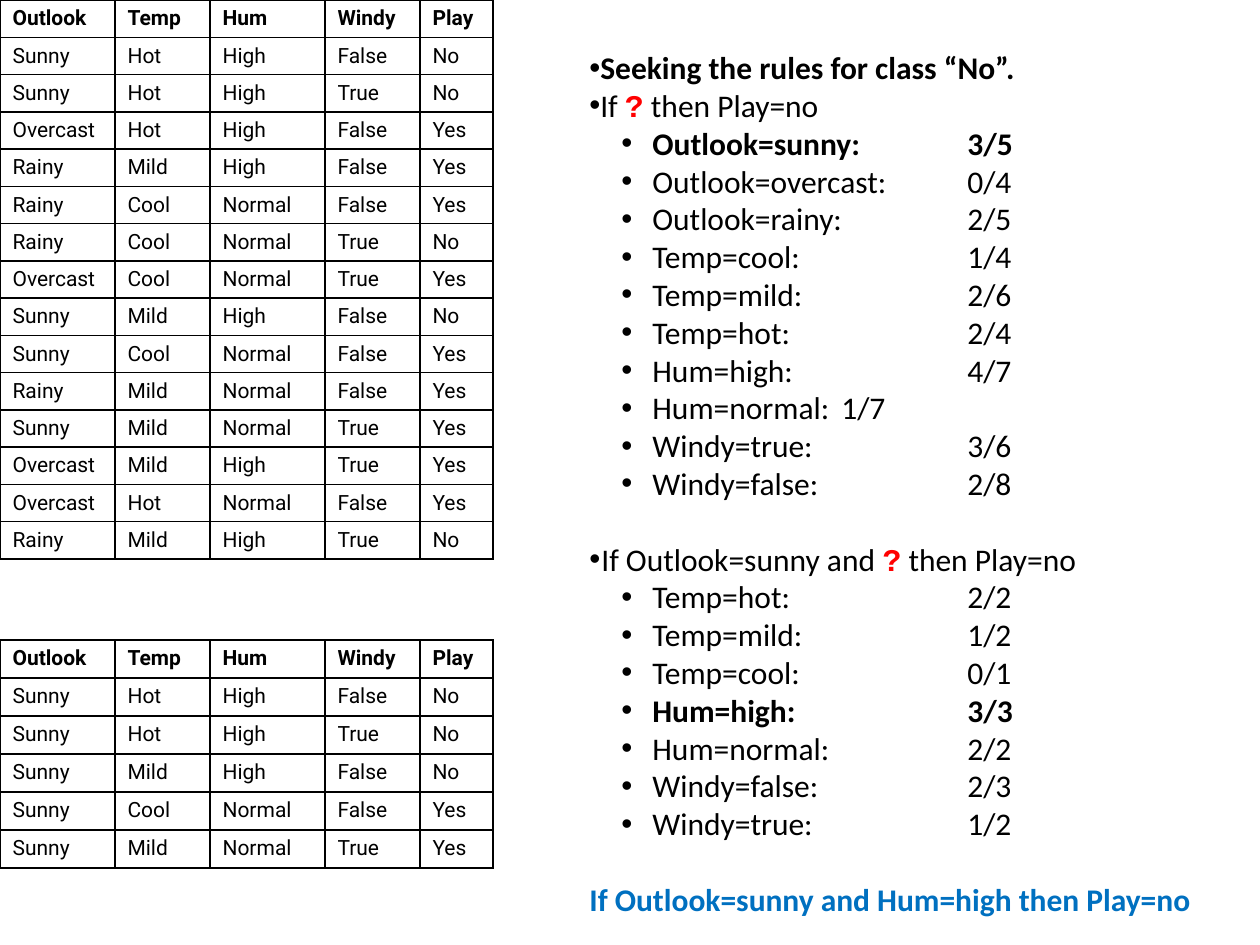
from lxml.etree import SubElement
from pptx import Presentation
from pptx.dml.color import RGBColor
from pptx.enum.text import MSO_ANCHOR, MSO_AUTO_SIZE
from pptx.oxml.ns import qn
from pptx.util import Emu, Pt

BLACK = RGBColor(0, 0, 0)
RED = RGBColor(255, 0, 0)
BLUE = RGBColor(0, 112, 192)

HEADER = ("Outlook", "Temp", "Hum", "Windy", "Play")
WEATHER = [
    ("Sunny", "Hot", "High", "False", "No"),
    ("Sunny", "Hot", "High", "True", "No"),
    ("Overcast", "Hot", "High", "False", "Yes"),
    ("Rainy", "Mild", "High", "False", "Yes"),
    ("Rainy", "Cool", "Normal", "False", "Yes"),
    ("Rainy", "Cool", "Normal", "True", "No"),
    ("Overcast", "Cool", "Normal", "True", "Yes"),
    ("Sunny", "Mild", "High", "False", "No"),
    ("Sunny", "Cool", "Normal", "False", "Yes"),
    ("Rainy", "Mild", "Normal", "False", "Yes"),
    ("Sunny", "Mild", "Normal", "True", "Yes"),
    ("Overcast", "Mild", "High", "True", "Yes"),
    ("Overcast", "Hot", "Normal", "False", "Yes"),
    ("Rainy", "Mild", "High", "True", "No"),
]
SUNNY = [row for row in WEATHER if row[0] == "Sunny"]
COLUMN_WIDTHS = (115, 95, 115, 95, 73)

TITLE = "Seeking the rules for class “No”."
FIRST_RULE = ("If ", "?", " then Play=no")
FIRST_RATIOS = [
    "Outlook=sunny: \t3/5", "Outlook=overcast: \t0/4", "Outlook=rainy: \t2/5",
    "Temp=cool: \t\t1/4", "Temp=mild: \t\t2/6", "Temp=hot:\t\t2/4",
    "Hum=high: \t\t4/7", "Hum=normal: \t1/7",
    "Windy=true: \t\t3/6", "Windy=false: \t\t2/8",
]
SECOND_RULE = ("If Outlook=sunny and ", "?", " then Play=no")
SECOND_RATIOS = [
    "Temp=hot:\t\t2/2", "Temp=mild:\t\t1/2", "Temp=cool:\t\t0/1",
    "Hum=high:\t\t3/3", "Hum=normal:\t\t2/2",
    "Windy=false:\t\t2/3", "Windy=true:\t\t1/2",
]
BEST_RATIOS = (FIRST_RATIOS[0], SECOND_RATIOS[3])
CONCLUSION = "If Outlook=sunny and Hum=high then Play=no"
LINE_GAP = Pt(21.6)


def px(length):
    return Emu(round(length * 914400 / 126))


def style_run(run, size, name, color=BLACK, bold=False):
    run.font.size = Pt(size)
    run.font.name = name
    run.font.color.rgb = color
    run.font.bold = bold


def border_cell(cell):
    properties = cell._tc.get_or_add_tcPr()
    for side in ("lnL", "lnR", "lnT", "lnB"):
        line = SubElement(properties, qn(f"a:{side}"), w=str(Pt(1)))
        fill = SubElement(line, qn("a:solidFill"))
        SubElement(fill, qn("a:srgbClr"), val=str(BLACK))


def add_weather_table(slide, top, row_height, records):
    rows = [HEADER] + records
    table = slide.shapes.add_table(
        len(rows), len(HEADER), 0, px(top),
        px(sum(COLUMN_WIDTHS)), px(row_height * len(rows))).table
    table.first_row = table.horz_banding = False
    for column, width in zip(table.columns, COLUMN_WIDTHS):
        column.width = px(width)
    for row_index, row in enumerate(rows):
        table.rows[row_index].height = px(row_height)
        for column_index, value in enumerate(row):
            cell = table.cell(row_index, column_index)
            cell.text_frame.text = value
            cell.vertical_anchor = MSO_ANCHOR.TOP
            border_cell(cell)
            cell.fill.background()
            paragraph = cell.text_frame.paragraphs[0]
            style_run(paragraph.runs[0], 12, "Roboto", bold=row_index == 0)


def add_line(text_frame, parts, margin=0, indent=0, bullet=True, gap=0,
             color=BLACK, bold=False):
    paragraph = text_frame.paragraphs[0]
    if paragraph.runs:
        paragraph = text_frame.add_paragraph()
    paragraph.space_before = gap
    properties = paragraph._p.get_or_add_pPr()
    properties.set("marL", str(px(margin)))
    properties.set("indent", str(px(indent)))
    properties.set("defTabSz", str(px(126)))
    if bullet:
        SubElement(properties, qn("a:buFont"), typeface="Arial")
        SubElement(properties, qn("a:buChar"), char="•")
    for part in parts:
        run = paragraph.add_run()
        run.text = part
        if part == "?":
            style_run(run, 18, "Courier New", RED, True)
        else:
            style_run(run, 18, "Calibri", color, bold)


def add_ratios(text_frame, ratios):
    for ratio in ratios:
        add_line(text_frame, [ratio], margin=63, indent=-31, bold=ratio in BEST_RATIOS)


def add_rules(slide):
    text_frame = slide.shapes.add_textbox(px(577), px(42), px(633), px(891)).text_frame
    text_frame.word_wrap = True
    text_frame.auto_size = MSO_AUTO_SIZE.SHAPE_TO_FIT_TEXT
    add_line(text_frame, [TITLE], bold=True)
    add_line(text_frame, FIRST_RULE)
    add_ratios(text_frame, FIRST_RATIOS)
    add_line(text_frame, SECOND_RULE, margin=12, indent=-12, gap=LINE_GAP)
    add_ratios(text_frame, SECOND_RATIOS)
    add_line(text_frame, [CONCLUSION], bullet=False, gap=LINE_GAP, color=BLUE, bold=True)


def main():
    presentation = Presentation()
    presentation.slide_width = px(1260)
    presentation.slide_height = px(945)
    slide = presentation.slides.add_slide(presentation.slide_layouts[6])
    add_weather_table(slide, 0, 37, WEATHER)
    add_rules(slide)
    add_weather_table(slide, 640, 38, SUNNY)
    presentation.save("out.pptx")


if __name__ == "__main__":
    main()
